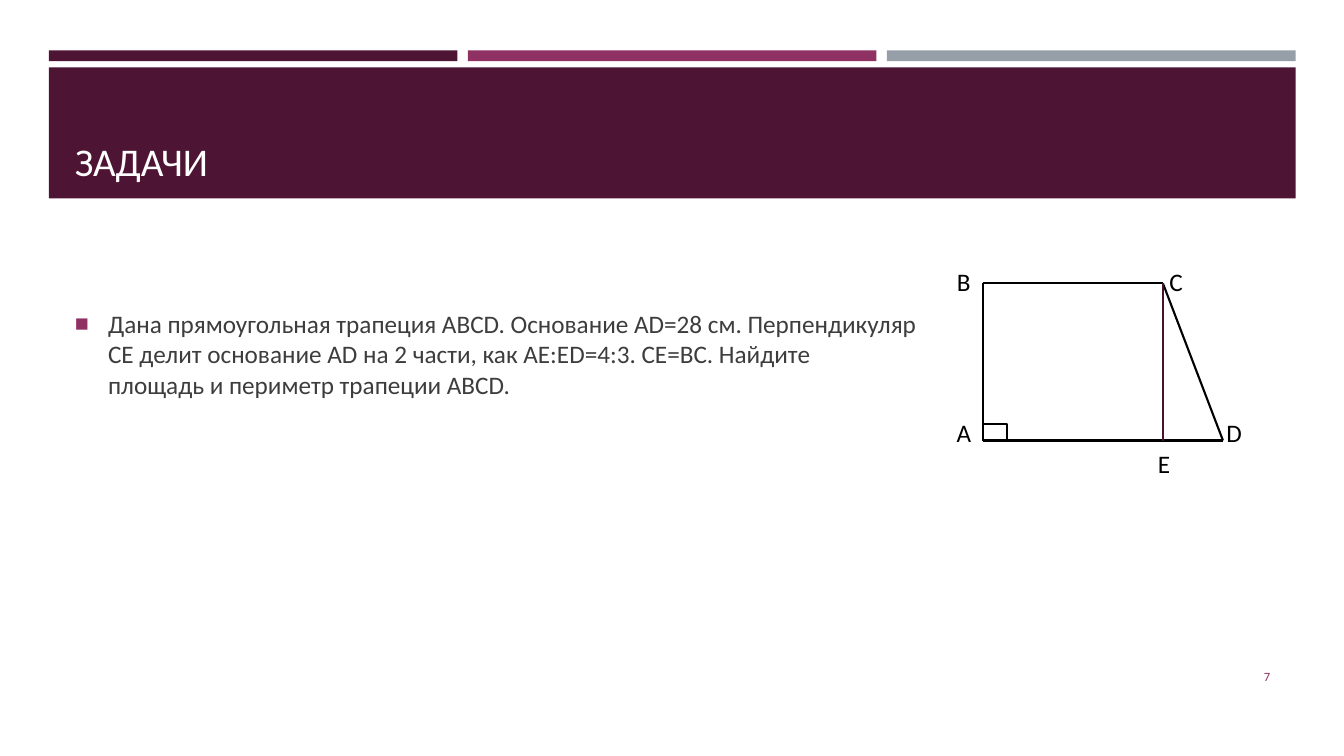
import pptx
import pptx.util
import pptx.dml.color
import pptx.enum.shapes
import pptx.enum.text
import pptx.oxml
import pptx.oxml.ns
import lxml.etree

Cm, Pt = pptx.util.Cm, pptx.util.Pt
ANCHOR = pptx.enum.text.MSO_ANCHOR
ALIGN = pptx.enum.text.PP_ALIGN

PLUM, MAGENTA, GREY = "4D1434", "903163", "969FA7"
BLACK, WHITE, DARK = "000000", "FFFFFF", "3D3D3D"


def color(value):
    return pptx.dml.color.RGBColor.from_string(value)


def place(sp, x, y, w, h):
    sp.left, sp.top, sp.width, sp.height = Cm(x), Cm(y), Cm(w), Cm(h)


def set_font(p, size, value):
    p.font.name = "Calibri"
    p.font.size = Pt(size)
    p.font.color.rgb = color(value)


def add_bar(s, x, y, w, h, fill):
    sp = s.shapes.add_shape(pptx.enum.shapes.MSO_SHAPE.RECTANGLE,
                            Cm(x), Cm(y), Cm(w), Cm(h))
    sp.shadow.inherit = False
    sp.fill.solid()
    sp.fill.fore_color.rgb = color(fill)
    sp.line.fill.background()


def add_line(s, start, end, value, width):
    line = s.shapes.add_connector(pptx.enum.shapes.MSO_CONNECTOR.STRAIGHT,
                                  Cm(start[0]), Cm(start[1]), Cm(end[0]), Cm(end[1]))
    line.line.color.rgb = color(value)
    line.line.width = Pt(width)
    lxml.etree.SubElement(line.element.spPr, pptx.oxml.ns.qn("a:effectLst"))


def add_text(s, x, y, w, h, text, size, value, align):
    tf = s.shapes.add_textbox(Cm(x), Cm(y), Cm(w), Cm(h)).text_frame
    tf.word_wrap = True
    tf.vertical_anchor = ANCHOR.MIDDLE
    p = tf.paragraphs[0]
    p.text = text
    p.alignment = align
    set_font(p, size, value)


def fill_placeholder(sp, box, text, anchor, size, value):
    """Fill a placeholder, bring it to the front and return its paragraph."""
    place(sp, *box)
    sp.element.getparent().append(sp.element)
    tf = sp.text_frame
    tf.word_wrap = True
    tf.auto_size = pptx.enum.text.MSO_AUTO_SIZE.NONE
    tf.vertical_anchor = anchor
    p = tf.paragraphs[0]
    p.text = text
    p.alignment = ALIGN.LEFT
    set_font(p, size, value)
    return p


def add_header(s, x, y, w, h):
    # Three accent bars above the title band
    gap = 0.26
    bar_w = (w - 2 * gap) / 3
    for i, fill in enumerate((PLUM, MAGENTA, GREY)):
        add_bar(s, x + i * (bar_w + gap), y, bar_w, 0.27, fill)
    # Title band
    add_bar(s, x, y + 0.43, w, h - 0.43, PLUM)
    fill_placeholder(s.shapes.title, (x + 0.4, y + 0.69, w - 0.79, 2.82),
                     "ЗАДАЧИ", ANCHOR.BOTTOM, 28, WHITE)


def add_problem(s, x, y, w, h):
    text = ("Дана прямоугольная трапеция ABCD. Основание AD=28 см. Перпендикуляр\v"
            "CE делит основание AD на 2 части, как AE:ED=4:3. CE=BC. Найдите\v"
            "площадь и периметр трапеции ABCD.")
    p = fill_placeholder(s.placeholders[1], (x, y, w, h), text, ANCHOR.MIDDLE, 18, DARK)
    p.space_before, p.space_after = Pt(3.6), Pt(6)
    # Square bullet with a hanging indent
    pPr = p._p.get_or_add_pPr()
    pPr.set("marL", str(Cm(0.84)))
    pPr.set("indent", str(-Cm(0.84)))
    ns = pptx.oxml.ns.nsdecls("a")
    bullet = (f'<a:buClr {ns}><a:srgbClr val="{MAGENTA}"/></a:buClr>',
              f'<a:buSzPct {ns} val="92000"/>',
              f'<a:buChar {ns} char="■"/>')
    defaults = pPr.find(pptx.oxml.ns.qn("a:defRPr"))
    for xml in bullet:
        defaults.addprevious(pptx.oxml.parse_xml(xml))


def add_trapezoid(s, x, y, w, h):
    top_w = 0.75 * w
    A, B, C = (x, y + h), (x, y), (x + top_w, y)
    D, E = (x + w, y + h), (x + top_w, y + h)
    # Sides
    for start, end in ((A, B), (B, C), (A, D), (C, D)):
        add_line(s, start, end, BLACK, 1.5)
    # Right-angle mark at A
    mark_w, mark_h = 0.61, 0.41
    builder = s.shapes.build_freeform(Cm(x), Cm(y + h - mark_h))
    builder.add_line_segments([(Cm(x + mark_w), Cm(y + h - mark_h)),
                               (Cm(x + mark_w), Cm(y + h))], close=False)
    mark = builder.convert_to_shape()
    mark.shadow.inherit = False
    mark.fill.background()
    mark.line.color.rgb = color(BLACK)
    mark.line.width = Pt(1.5)
    # Perpendicular CE
    add_line(s, C, E, "45122F", 1)
    # Vertex letters, centred at an offset from each vertex
    size = 1
    for letter, (px, py), dx, dy in (("A", A, -0.48, -0.2), ("B", B, -0.48, -0.05),
                                     ("C", C, 0.33, -0.05), ("D", D, 0.28, -0.2),
                                     ("E", E, 0.03, 0.57)):
        add_text(s, px + dx - size / 2, py + dy - size / 2, size, size,
                 letter, 18, BLACK, ALIGN.CENTER)


def main():
    prs = pptx.Presentation()
    prs.slide_width, prs.slide_height = Cm(33.87), Cm(19.05)
    s = prs.slides.add_slide(prs.slide_layouts[1])
    add_header(s, 1.23, 1.27, 31.42, 3.73)
    add_problem(s, 1.63, 6.07, 30.63, 5.69)
    add_trapezoid(s, 24.77, 7.14, 6.05, 3.96)
    # Slide number
    add_text(s, 29.34, 16.54, 2.92, 1.02, "7", 9, MAGENTA, ALIGN.RIGHT)
    prs.save("out.pptx")


if __name__ == "__main__":
    main()
